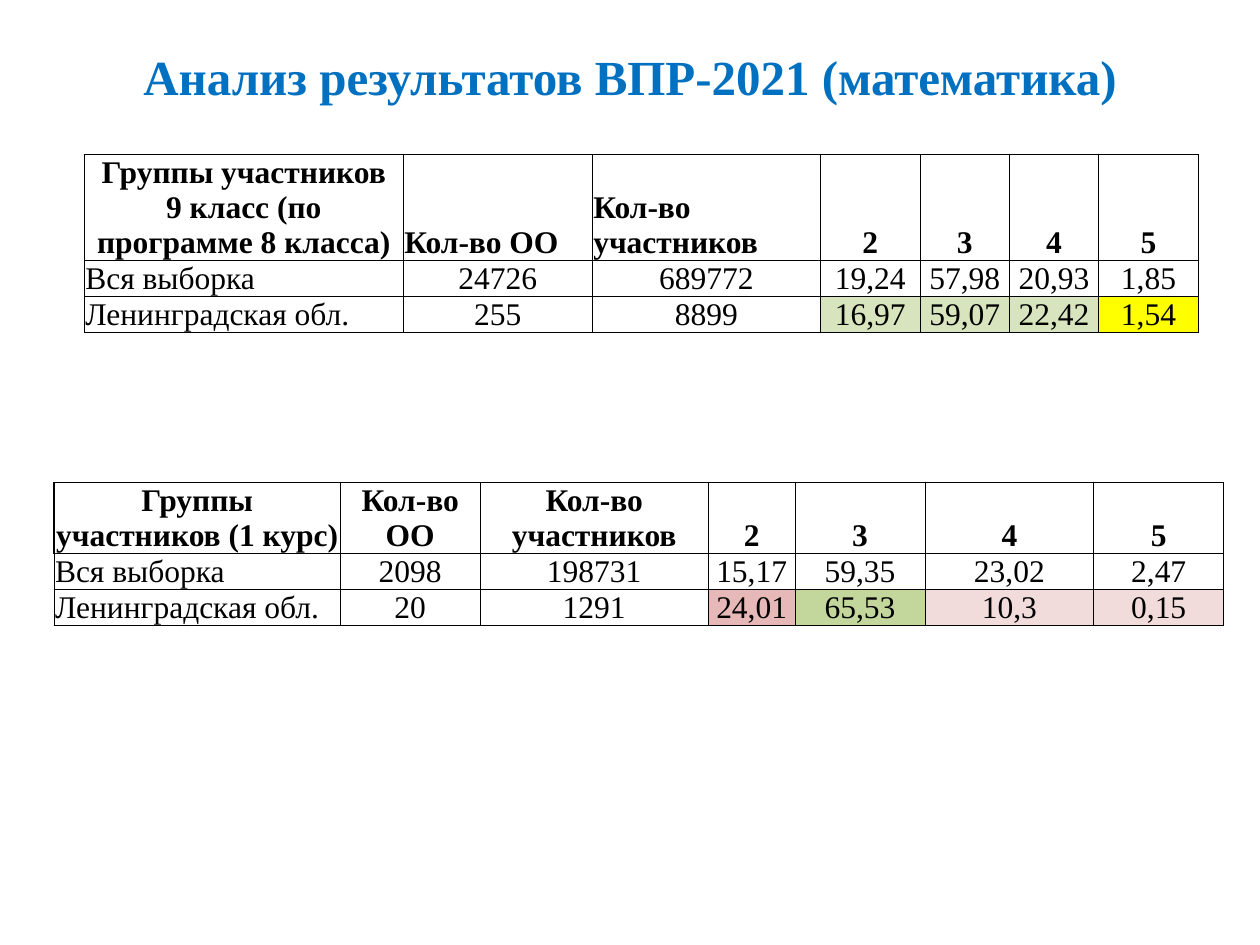
from dataclasses import dataclass, field

import lxml.etree
import pptx
import pptx.dml.color
import pptx.enum.text
import pptx.oxml.ns
import pptx.util

Cm = pptx.util.Cm
Pt = pptx.util.Pt
ALIGN = pptx.enum.text.PP_ALIGN
ANCHOR = pptx.enum.text.MSO_ANCHOR


@dataclass(frozen=True)
class Theme:
    font: str = "Times New Roman"
    title_size: float = 28
    table_size: float = 18
    title: str = "0070C0"
    ink: str = "000000"
    thin: float = 0.5
    thick: float = 1
    pale_green: str = "D7E4BD"
    green: str = "C3D69B"
    yellow: str = "FFFF00"
    pink: str = "E6B9B8"
    pale_pink: str = "F2DCDB"


THEME = Theme()


@dataclass(frozen=True)
class ResultsTable:
    """One table of grades; lengths are in centimetres."""
    left: float
    top: float
    columns: list[float]
    header_height: float
    rows: list[list[str]]
    region_fills: list[str]  # colours of the last row's grade cells
    left_headers: set[int] = field(default_factory=set)
    corner_anchor: ANCHOR = ANCHOR.BOTTOM


ROW_HEIGHT = 0.71
FIRST_GRADE = 3

COLLEGE = ResultsTable(
    left=1.09, top=9.73, header_height=1.43,
    columns=[5.77, 2.82, 4.6, 1.75, 2.62, 3.4, 2.62],
    rows=[
        ["Группы участников (1 курс)", "Кол-во ОО", "Кол-во участников", "2", "3", "4", "5"],
        ["Вся выборка", "2098", "198731", "15,17", "59,35", "23,02", "2,47"],
        ["Ленинградская обл.", "20", "1291", "24,01", "65,53", "10,3", "0,15"],
    ],
    region_fills=[THEME.pink, THEME.green, THEME.pale_pink, THEME.pale_pink],
    corner_anchor=ANCHOR.MIDDLE,
)

SCHOOL = ResultsTable(
    left=1.7, top=3.12, header_height=2.13,
    columns=[6.43, 3.81, 4.6, 2.01, 1.8, 1.8, 2.01],
    rows=[
        ["Группы участников\n9 класс (по программе 8 класса)", "Кол-во ОО",
         "Кол-во участников", "2", "3", "4", "5"],
        ["Вся выборка", "24726", "689772", "19,24", "57,98", "20,93", "1,85"],
        ["Ленинградская обл.", "255", "8899", "16,97", "59,07", "22,42", "1,54"],
    ],
    region_fills=[THEME.pale_green] * 3 + [THEME.yellow],
    left_headers={1, 2},
)


def format_paragraph(para, size: float, color: str, bold: bool, align: ALIGN) -> None:
    para.alignment = align
    for span in para.runs:
        span.font.name = THEME.font
        span.font.size = Pt(size)
        span.font.bold = bold
        span.font.color.rgb = pptx.dml.color.RGBColor.from_string(color)


def set_borders(cell, left: float, right: float) -> None:
    """Rule all four sides; border lines must come before the cell's fill."""
    properties = cell._tc.get_or_add_tcPr()
    widths = {"lnL": left, "lnR": right, "lnT": THEME.thin, "lnB": THEME.thin}
    qn = pptx.oxml.ns.qn
    for index, (side, width) in enumerate(widths.items()):
        line = lxml.etree.Element(qn(f"a:{side}"), w=str(Pt(width)))
        fill = lxml.etree.SubElement(line, qn("a:solidFill"))
        lxml.etree.SubElement(fill, qn("a:srgbClr"), val=THEME.ink)
        properties.insert(index, line)


def fill_cell(cell, color: str | None) -> None:
    if color is None:
        cell.fill.background()
    else:
        cell.fill.solid()
        cell.fill.fore_color.rgb = pptx.dml.color.RGBColor.from_string(color)


def draw_table(page, spec: ResultsTable) -> None:
    heights = [spec.header_height] + [ROW_HEIGHT] * (len(spec.rows) - 1)
    table = page.shapes.add_table(
        len(spec.rows), len(spec.columns), Cm(spec.left), Cm(spec.top),
        Cm(sum(spec.columns)), Cm(sum(heights))).table
    table.first_row = table.horz_banding = False
    for column, width in zip(table.columns, spec.columns):
        column.width = Cm(width)
    for row, height in zip(table.rows, heights):
        row.height = Cm(height)

    last_row, last_column = len(spec.rows) - 1, len(spec.columns) - 1
    for r, texts in enumerate(spec.rows):
        is_header = r == 0
        for c, text in enumerate(texts):
            cell = table.cell(r, c)
            cell.margin_left = cell.margin_right = cell.margin_top = Cm(0.02)
            cell.margin_bottom = 0
            is_corner = is_header and c == 0
            cell.vertical_anchor = spec.corner_anchor if is_corner else ANCHOR.BOTTOM
            # Text
            cell.text_frame.text = text
            is_left = c in spec.left_headers if is_header else c == 0
            for para in cell.text_frame.paragraphs:
                format_paragraph(para, THEME.table_size, THEME.ink, is_header,
                                 ALIGN.LEFT if is_left else ALIGN.CENTER)
            # Fill and borders
            is_marked = r == last_row and c >= FIRST_GRADE
            fill_cell(cell, spec.region_fills[c - FIRST_GRADE] if is_marked else None)
            set_borders(cell,
                        left=THEME.thick if is_corner else THEME.thin,
                        right=THEME.thick if is_header and c == last_column else THEME.thin)


def draw_title(page, text: str) -> None:
    title = page.shapes.title
    title.left, title.top, title.width, title.height = Cm(1.27), Cm(0.76), Cm(22.86), Cm(1.55)
    frame = title.text_frame
    frame.text = text
    frame.word_wrap = True
    frame.vertical_anchor = ANCHOR.MIDDLE
    format_paragraph(frame.paragraphs[0], THEME.title_size, THEME.title, True, ALIGN.CENTER)


def main() -> None:
    deck = pptx.Presentation()
    deck.slide_width, deck.slide_height = Cm(25.4), Cm(19.05)
    page = deck.slides.add_slide(deck.slide_layouts.get_by_name("Title Only"))
    draw_title(page, "Анализ результатов ВПР-2021 (математика)")
    for spec in (COLLEGE, SCHOOL):
        draw_table(page, spec)
    deck.save("out.pptx")


if __name__ == "__main__":
    main()
